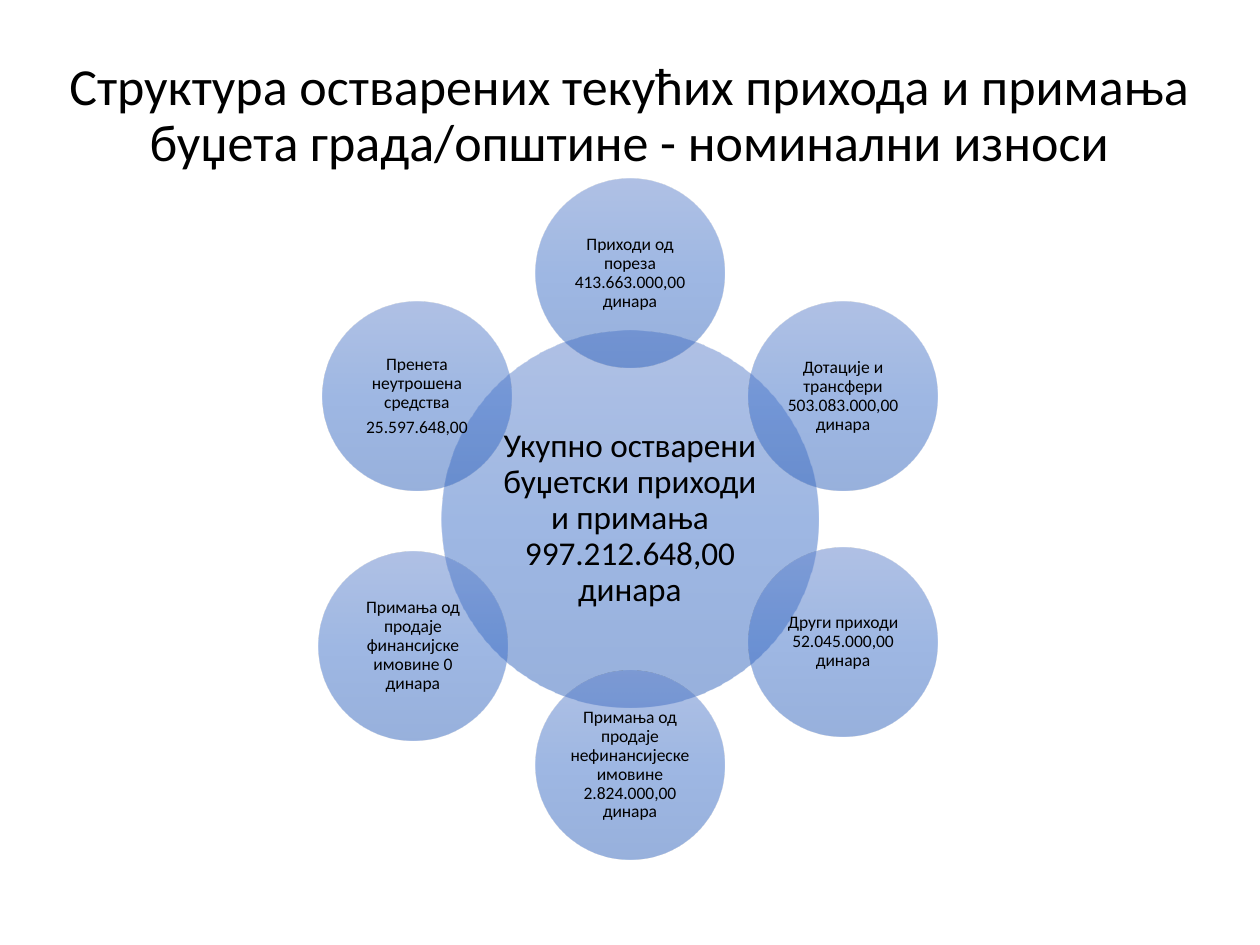
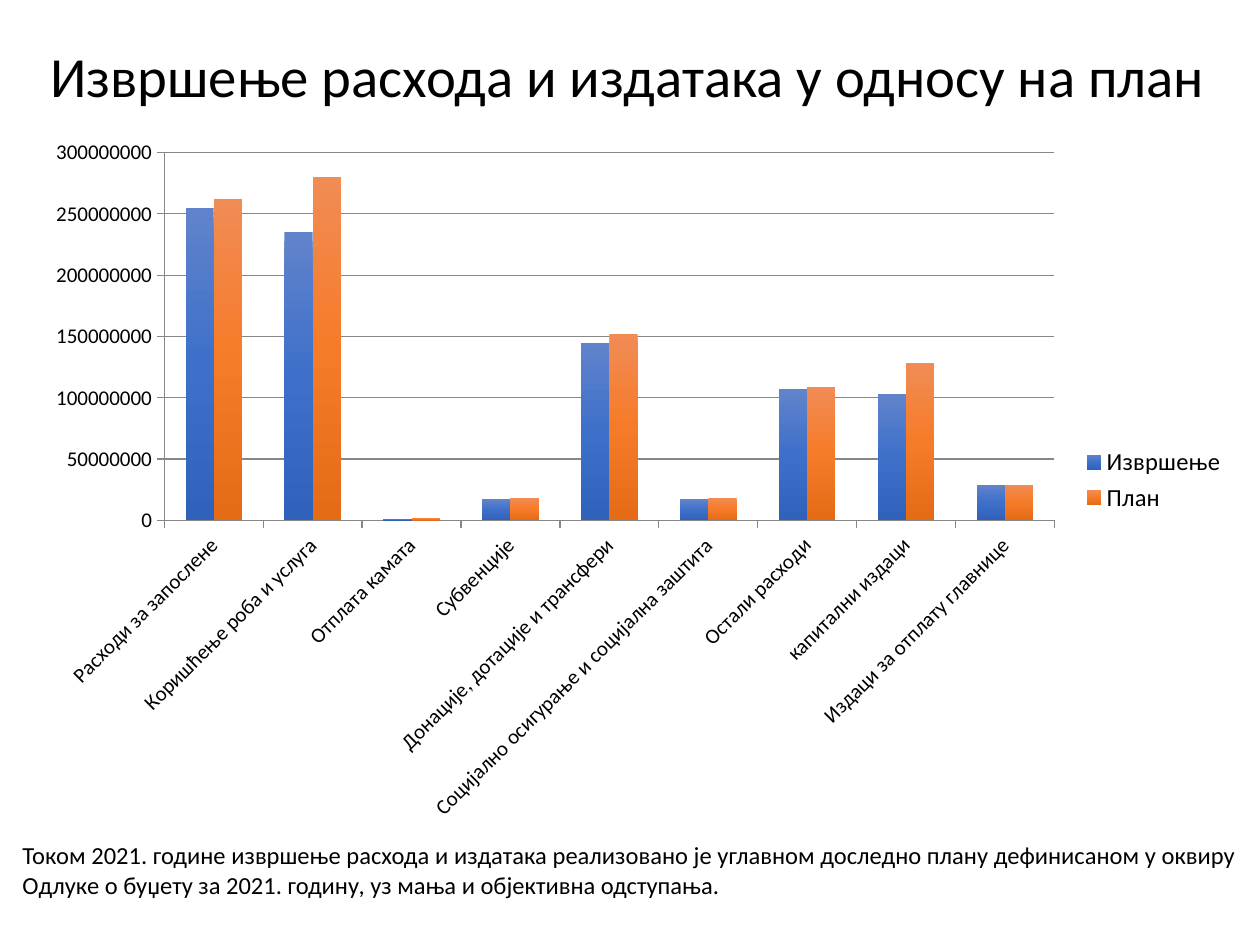
from math import cos, radians, sin

from pptx import Presentation
from pptx.chart.data import CategoryChartData
from pptx.dml.color import RGBColor
from pptx.enum.chart import XL_CHART_TYPE, XL_LEGEND_POSITION, XL_TICK_MARK
from pptx.enum.shapes import MSO_SHAPE
from pptx.enum.text import MSO_ANCHOR, PP_ALIGN
from pptx.oxml import parse_xml
from pptx.oxml.ns import nsdecls, qn
from pptx.util import Pt

# Shared look; all lengths are px, 126 to the inch
PX = 914400 / 126
FONT = "Calibri"
BLACK = RGBColor.from_string("000000")
GREY = RGBColor.from_string("878787")
BLUES = ["6183CB", "3E70CA", "3062BB"]
ORANGES = ["F18C55", "F67B28", "E56B17"]


def write(shape, paragraphs, size, align, anchor, spacing=0.9, after=0, inset=None):
    """Fill a shape with paragraphs; a paragraph is a list of lines."""
    frame = shape.text_frame
    frame.word_wrap = True
    frame.vertical_anchor = anchor
    if inset is not None:
        frame.margin_left = frame.margin_right = round(inset * PX)
        frame.margin_top = frame.margin_bottom = round(inset * PX)
    for i, lines in enumerate(paragraphs):
        paragraph = frame.add_paragraph() if i else frame.paragraphs[0]
        paragraph.alignment = align
        paragraph.line_spacing = spacing
        paragraph.space_after = Pt(after)
        for j, line in enumerate(lines):
            if j:
                paragraph.add_line_break()
            run = paragraph.add_run()
            run.text = line
            run.font.size = Pt(size)
            run.font.name = FONT
            run.font.color.rgb = BLACK


def shade(fill, properties, colours, opacity=100):
    """Give a shape or series a vertical three-stop gradient."""
    fill.background()
    stops = "".join(
        f'<a:gs pos="{i * 50000}"><a:srgbClr val="{colour}">'
        f'<a:alpha val="{opacity * 1000}"/></a:srgbClr></a:gs>'
        for i, colour in enumerate(colours))
    gradient = parse_xml(
        f'<a:gradFill {nsdecls("a")} rotWithShape="1"><a:gsLst>{stops}</a:gsLst>'
        '<a:lin ang="5400000" scaled="0"/></a:gradFill>')
    properties.replace(properties.find(qn("a:noFill")), gradient)


deck = Presentation()
deck.slide_width, deck.slide_height = round(1260 * PX), round(945 * PX)

# Both slides with their titles
titles = [
    (["Структура остварених текућих прихода и примања",
      "буџета града/општине - номинални износи"], 29.7, 147, PP_ALIGN.CENTER),
    (["Извршење расхода и издатака у односу на план"], 32.4, 84, PP_ALIGN.LEFT),
]
slides = []
for lines, size, height, align in titles:
    slide = deck.slides.add_slide(deck.slide_layouts[6])
    title = slide.shapes.add_textbox(
        *[round(n * PX) for n in (38, 32, 1184, height)])
    write(title, [lines], size, align, MSO_ANCHOR.BOTTOM)
    slides.append(slide)
revenue_slide, spending_slide = slides

# Slide 1: total in the middle, six sources on a ring, clockwise from the top
CENTER_X, CENTER_Y, RING = 630, 519, 246
sources = [
    ["Приходи од пореза 413.663.000,00 динара"],
    ["Дотације и трансфери 503.083.000,00 динара"],
    ["Други приходи 52.045.000,00 динара"],
    ["Примања од продаје нефинансијеске имовине 2.824.000,00 динара"],
    ["Примања од продаје финансијске имовине 0 динара"],
    ["Пренета неутрошена средства", "25.597.648,00"],
]
total = ["Укупно остварени буџетски приходи и примања 997.212.648,00 динара"]
circles = [(CENTER_X, CENTER_Y, 377, total, 19, 4)]
for i, source in enumerate(sources):
    angle = radians(60 * i - 90)
    nudge = 4 if i == 4 else 0  # financial assets sit slightly off the ring
    circles.append((CENTER_X + RING * cos(angle) - nudge,
                    CENTER_Y + RING * sin(angle) + nudge, 189, source, 10, 1))

for x, y, diameter, texts, size, inset in circles:
    circle = revenue_slide.shapes.add_shape(
        MSO_SHAPE.OVAL, round((x - diameter / 2) * PX), round((y - diameter / 2) * PX),
        round(diameter * PX), round(diameter * PX))
    circle.shadow.inherit = False
    circle.line.fill.background()
    shade(circle.fill, circle._element.spPr, BLUES, opacity=50)
    write(circle, [[text] for text in texts], size, PP_ALIGN.CENTER,
          MSO_ANCHOR.MIDDLE, after=size * 0.35, inset=inset)

# Slide 2: spending against plan, in millions
spending = [
    ("Расходи за запослене", 255, 262),
    ("Коришћење роба и услуга", 235, 280),
    ("Отплата камата", 1, 2),
    ("Субвенције", 17, 18),
    ("Донације, дотације и трансфери", 145, 152),
    ("Социјално осигурање и социјална заштита", 17, 18),
    ("Остали расходи", 107, 109),
    ("капитални издаци", 103, 128),
    ("Издаци за отплату главнице", 29, 29),
]
names, actual, planned = zip(*spending)
data = CategoryChartData()
data.categories = names
data.add_series("Извршење", [value * 1_000_000 for value in actual])
data.add_series("План", [value * 1_000_000 for value in planned])
chart = spending_slide.shapes.add_chart(
    XL_CHART_TYPE.COLUMN_CLUSTERED,
    *[round(n * PX) for n in (32, 126, 1207, 708)], data).chart
chart.has_title = False
chart.font.name = FONT
chart.font.size = Pt(18)
chart.font.color.rgb = BLACK

plot = chart.plots[0]
plot.gap_width = 150
plot.overlap = 0
plot.vary_by_categories = False
for series, colours in zip(plot.series, (BLUES, ORANGES)):
    shade(series.format.fill, series._element.spPr, colours)

for axis in (chart.category_axis, chart.value_axis):
    axis.major_tick_mark = XL_TICK_MARK.OUTSIDE
    axis.minor_tick_mark = XL_TICK_MARK.NONE
    axis.tick_labels.font.size = Pt(12)
    axis.format.line.color.rgb = GREY
chart.category_axis._element.txPr.find(qn("a:bodyPr")).set("rot", "-2700000")
chart.value_axis.maximum_scale = 300_000_000
chart.value_axis.major_gridlines.format.line.color.rgb = GREY

chart.has_legend = True
chart.legend.position = XL_LEGEND_POSITION.RIGHT
chart.legend.include_in_layout = False
chart.legend.font.size = Pt(14)

# Closing remark under the chart
remark = spending_slide.shapes.add_textbox(
    *[round(n * PX) for n in (10, 834, 1239, 72)])
write(remark, [["Током 2021. године извршење расхода и издатака реализовано је углавном "
                "доследно плану дефинисаном у оквиру Oдлуке о буџету за 2021. годину, "
                "уз мања и објективна одступања."]],
      14, PP_ALIGN.JUSTIFY, MSO_ANCHOR.TOP, spacing=1.0)

deck.save("out.pptx")
